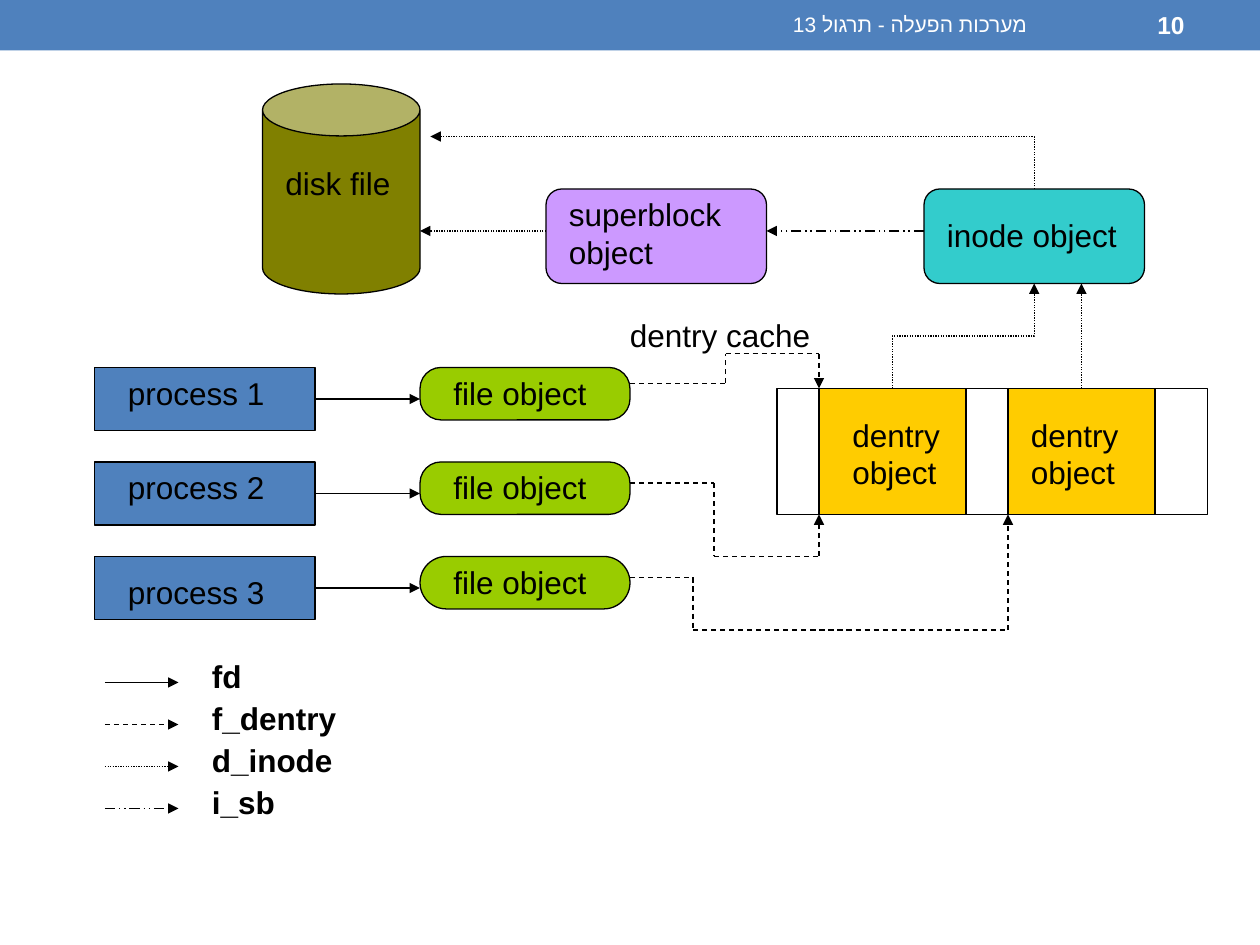
"""Build the slide that links processes, file objects, dentries, inode and disk."""
from dataclasses import dataclass
from itertools import pairwise

from lxml import etree
from pptx import Presentation
from pptx import util as u
from pptx.dml.color import RGBColor
from pptx.enum import dml, shapes, text
from pptx.oxml.ns import qn

SCALE = 7620  # EMU per px, 120 px to the inch
SHAPE = shapes.MSO_SHAPE
DASH = dml.MSO_LINE


@dataclass(frozen=True)
class Theme:
    """Colours, font and sizes."""
    font: str = "Arial"
    ink: str = "000000"
    paper: str = "FFFFFF"
    blue: str = "4F81BD"
    olive: str = "808000"
    violet: str = "CC99FF"
    teal: str = "33CCCC"
    green: str = "99CC00"
    amber: str = "FFCC00"
    body: int = 18
    header: int = 12
    number: int = 14
    stroke: float = 0.75


THEME = Theme()
FD = None
F_DENTRY = DASH.DASH
D_INODE = DASH.ROUND_DOT
I_SB = DASH.DASH_DOT_DOT


def px(*lengths):
    """Turn px lengths into EMU."""
    return [u.Emu(int(length * SCALE)) for length in lengths]


def set_line(line, dash=None):
    """Give a line the theme's ink and width and an optional dash."""
    line.color.rgb = RGBColor.from_string(THEME.ink)
    line.width = u.Pt(THEME.stroke)
    if dash is not None:
        line.dash_style = dash


def add_node(page, kind, at, fill=None, outlined=True, corner=None):
    """Add a preset shape."""
    node = page.shapes.add_shape(kind, *px(*at))
    node.shadow.inherit = False
    if fill:
        node.fill.solid()
        node.fill.fore_color.rgb = RGBColor.from_string(fill)
    else:
        node.fill.background()
    if outlined:
        set_line(node.line)
    else:
        node.line.fill.background()
    if corner is not None:
        node.adjustments[0] = corner
    return node


def add_label(page, words, at, size=THEME.body, color=THEME.ink, bold=False, header=False):
    """Add a text box, one paragraph per line; header text runs right to left."""
    box = page.shapes.add_textbox(*px(*at))
    frame = box.text_frame
    frame.word_wrap = header
    if header:
        frame.vertical_anchor = text.MSO_ANCHOR.MIDDLE
    else:
        frame.auto_size = text.MSO_AUTO_SIZE.SHAPE_TO_FIT_TEXT
    formats = {"name": THEME.font, "size": u.Pt(size), "bold": bold}
    for index, line in enumerate(words.split("\n")):
        para = frame.add_paragraph() if index else frame.paragraphs[0]
        if header:
            para.alignment = text.PP_ALIGN.RIGHT
            para._p.get_or_add_pPr().set("rtl", "1")
        span = para.add_run()
        span.text = line
        span.font.color.rgb = RGBColor.from_string(color)
        for name, value in formats.items():
            setattr(span.font, name, value)
        etree.SubElement(span._r.rPr, qn("a:cs"), typeface=THEME.font)


def add_link(page, start, end, dash=FD, arrow=True, kind=shapes.MSO_CONNECTOR.STRAIGHT):
    """Add a connector, with an arrowhead at its end if wanted."""
    link = page.shapes.add_connector(kind, *px(*start, *end))
    set_line(link.line, dash)
    if arrow:
        line = link._element.spPr.find(qn("a:ln"))
        etree.SubElement(line, qn("a:tailEnd"), type="triangle")
    etree.SubElement(link._element.spPr, qn("a:effectLst"))
    return link


def add_route(page, points, dash):
    """Add straight dashed legs through the points, the last with an arrowhead."""
    for start, end in pairwise(points):
        add_link(page, start, end, dash, arrow=end == points[-1])


def add_elbow(page, start, end, turn, flip=1, preset="bentConnector3"):
    """Add a bent d_inode connector that leaves vertically, turned by degrees."""
    middle_x, middle_y = (start[0] + end[0]) / 2, (start[1] + end[1]) / 2
    half_w = abs(end[1] - start[1]) / 2 * flip
    half_h = abs(end[0] - start[0]) / 2
    link = add_link(page, (middle_x - half_w, middle_y - half_h),
                    (middle_x + half_w, middle_y + half_h),
                    D_INODE, kind=shapes.MSO_CONNECTOR.ELBOW)
    link._element.spPr.find(qn("a:xfrm")).set("rot", str(turn * 60000))
    link._element.spPr.find(qn("a:prstGeom")).set("prst", preset)


def add_header(page):
    """Add the top bar with its title and number."""
    add_node(page, SHAPE.RECTANGLE, (0, 0, 1200, 48), THEME.blue, outlined=False)
    add_label(page, "מערכות הפעלה - תרגול 13", (450, 2, 540, 43),
              THEME.header, THEME.paper, header=True)
    add_label(page, "10", (1000, 2, 140, 43), THEME.number, THEME.paper, True, header=True)


def add_storage(page):
    """Add disk file, superblock and inode with their links."""
    add_node(page, SHAPE.CAN, (250, 80, 150, 200), THEME.olive, corner=0.33)
    for left, fill in ((520, THEME.violet), (880, THEME.teal)):
        add_node(page, SHAPE.ROUNDED_RECTANGLE, (left, 180, 210, 90), fill)
    add_label(page, "disk file", (260, 150, 124, 48))
    add_label(page, "superblock\nobject", (530, 180, 174, 84))
    add_label(page, "inode object", (890, 200, 186, 48))
    add_link(page, (520, 220), (400, 220), D_INODE)
    add_link(page, (880, 220), (730, 220), I_SB)
    add_elbow(page, (985, 180), (410, 130), 90, flip=-1, preset="bentConnector2")


def add_processes(page):
    """Add one row per process with its file object."""
    for row, (label_top, corner) in enumerate(((350, 0.4), (440, 0.4), (540, 0.5))):
        top = 350 + 90 * row
        process = add_node(page, SHAPE.RECTANGLE, (90, top, 210, 60), THEME.blue)
        add_node(page, SHAPE.ROUNDED_RECTANGLE, (400, top, 200, 50), THEME.green, corner=corner)
        add_link(page, (300, top + 30), (400, top + 30)).begin_connect(process, 3)
        add_label(page, f"process {row + 1}", (110, label_top, 154, 48))
        add_label(page, "file object", (420, top, 151, 48))


def add_dentry_cache(page):
    """Add the dentry cache and the links into and out of it."""
    dentries = [add_node(page, SHAPE.RECTANGLE, (left, 370, 140, 120), THEME.amber)
                for left in (780, 960)]
    for left in (800, 970):
        add_label(page, "dentry\nobject", (left, 390, 108, 84))
    add_node(page, SHAPE.RECTANGLE, (740, 370, 410, 120))
    add_label(page, "dentry cache", (588, 295, 196, 48))
    add_elbow(page, (850, 370), (985, 270), 270)
    add_link(page, (1030, 370), (1030, 270), D_INODE).begin_connect(dentries[1], 0)
    for top, bend, level, target in (
        (365, 691, 337, (780, 370)),
        (460, 680, 530, (780, 490)),
        (550, 660, 600, (960, 490)),
    ):
        add_route(page, [(600, top), (bend, top), (bend, level), (target[0], level), target],
                  F_DENTRY)


def add_legend(page):
    """Add the key to the line styles."""
    entries = (("fd", FD, 53), ("f_dentry", F_DENTRY, 143),
               ("d_inode", D_INODE, 139), ("i_sb", I_SB, 84))
    for row, (words, dash, width) in enumerate(entries):
        top = 620 + 40 * row
        add_link(page, (100, top + 30), (170, top + 30), dash)
        add_label(page, words, (190, top, width, 48), bold=True)


def main():
    """Build and save the deck."""
    deck = Presentation()
    deck.slide_width, deck.slide_height = px(1200, 900)
    page = deck.slides.add_slide(deck.slide_layouts[6])
    for add_part in (add_header, add_storage, add_processes, add_dentry_cache, add_legend):
        add_part(page)
    deck.save("out.pptx")


if __name__ == "__main__":
    main()
